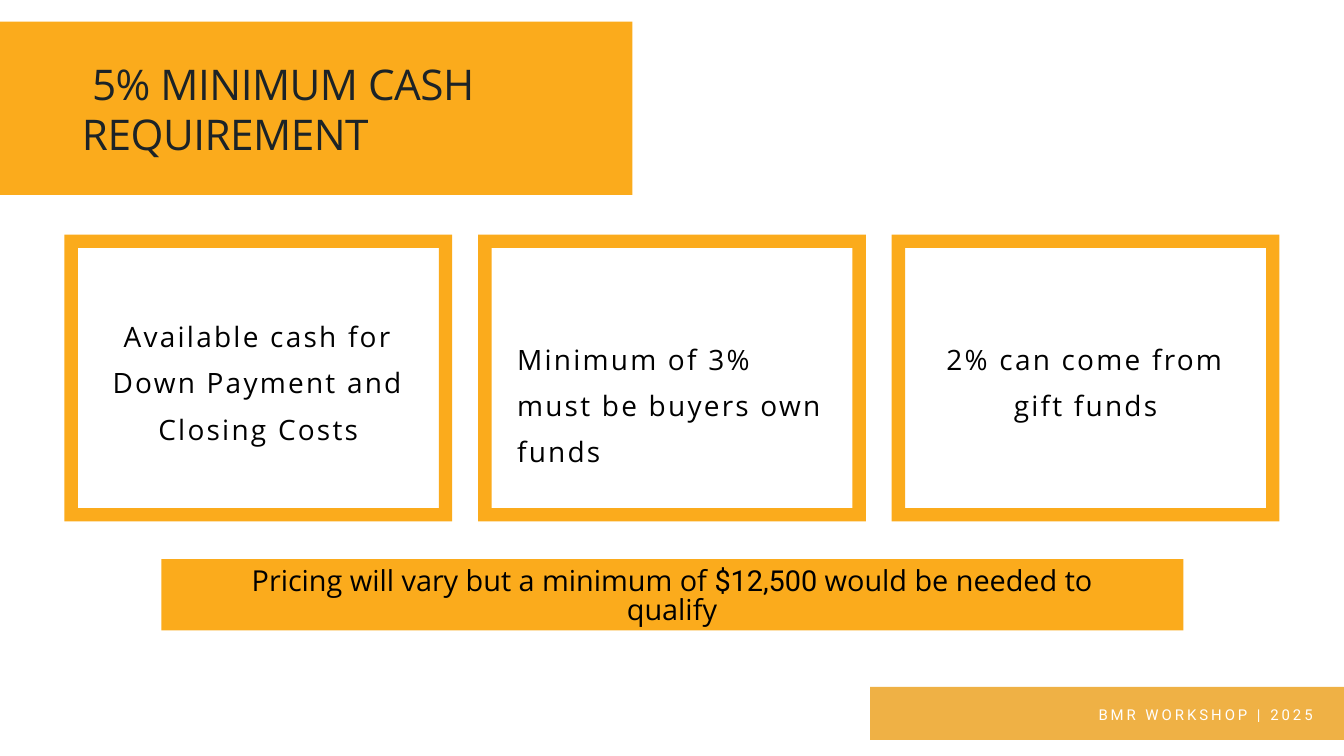
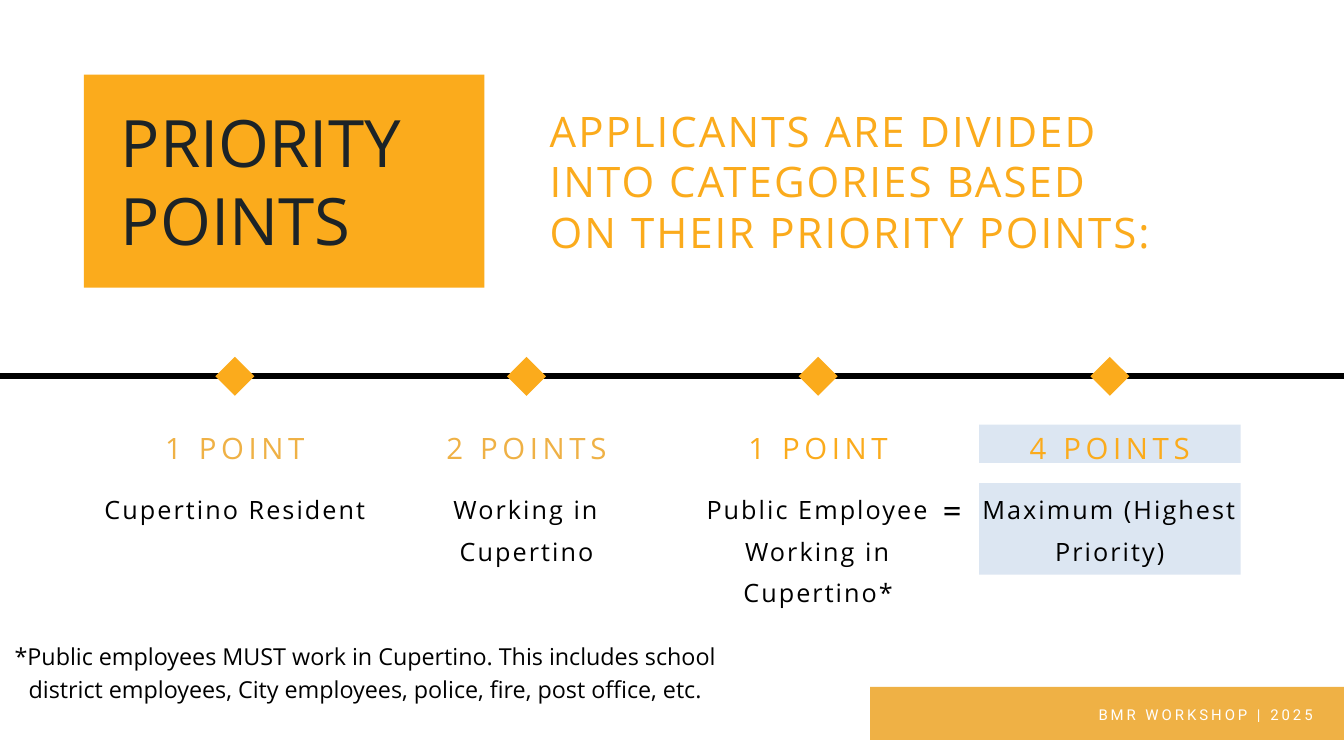
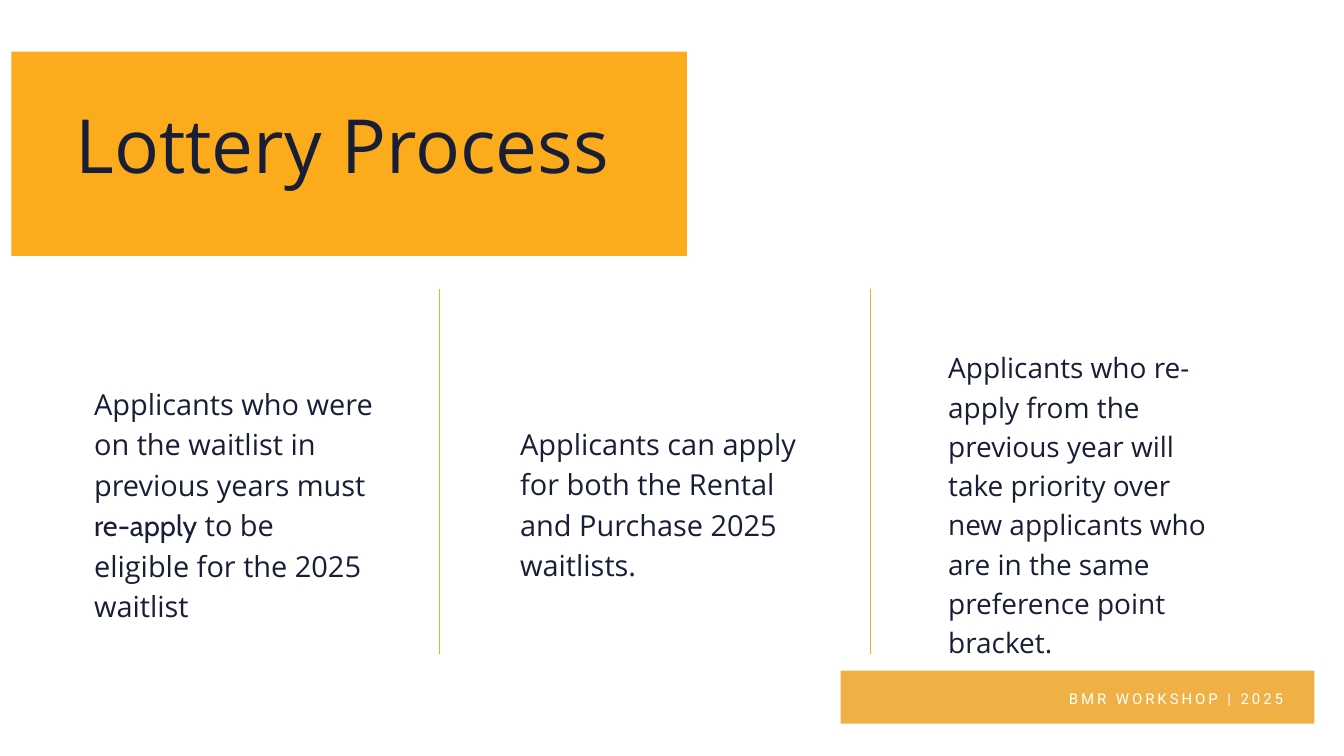
from dataclasses import dataclass, replace
from typing import NamedTuple

from lxml import etree
from pptx import Presentation
from pptx.dml.color import RGBColor
from pptx.enum.shapes import MSO_CONNECTOR, MSO_SHAPE
from pptx.enum.text import MSO_ANCHOR, MSO_AUTO_SIZE, PP_ALIGN
from pptx.oxml.ns import qn
from pptx.util import Inches, Pt

LEFT, CENTER, RIGHT = PP_ALIGN.LEFT, PP_ALIGN.CENTER, PP_ALIGN.RIGHT
TOP, NO_FIT = MSO_ANCHOR.TOP, MSO_AUTO_SIZE.NONE
RECTANGLE, FRAME, DIAMOND = MSO_SHAPE.RECTANGLE, MSO_SHAPE.FRAME, MSO_SHAPE.DIAMOND
STRAIGHT = MSO_CONNECTOR.STRAIGHT

COLUMNS, ROWS = 20, 11.25
SLIDE_WIDTH, SLIDE_HEIGHT = Inches(20), Inches(11.25)
TITLE_ONLY = 5


def col(count: float) -> int:
    return round(SLIDE_WIDTH * count / COLUMNS)


def row(count: float) -> int:
    return round(SLIDE_HEIGHT * count / ROWS)


class Box(NamedTuple):
    left: float
    top: float
    width: float
    height: float

    def emu(self) -> tuple:
        return col(self.left), row(self.top), col(self.width), row(self.height)


class Span(NamedTuple):
    text: str
    font: str = ""


@dataclass(frozen=True)
class Style:
    size: float
    leading: float | None
    color: str = "000000"
    font: str = "Open Sans"
    align: PP_ALIGN = LEFT
    tracking: float = 0
    indent: float = 0


@dataclass(frozen=True)
class Theme:
    amber: str = "FBAB1C"
    sand: str = "EFB145"
    pale_blue: str = "DCE6F2"
    black: str = "000000"
    cash_title: Style = Style(45.3, 53.5, "1C2327", tracking=-0.5, indent=0.15)
    points_title: Style = Style(70, 84, "1C2327")
    lottery_title: Style = Style(80, 80, "191E37")
    card: Style = Style(30, 49.5, align=CENTER, tracking=2.4)
    pricing: Style = Style(30.9, 30.9, align=CENTER)
    lead: Style = Style(45, 54, "FBAB1C", tracking=2.2)
    score: Style = Style(31.5, 44.1, "FBAB1C", align=CENTER, tracking=5)
    category: Style = Style(27, 44.5, align=CENTER, tracking=2.2)
    equals: Style = Style(40, None, font="Calibri", align=CENTER)
    footnote: Style = Style(25, 35, align=CENTER)
    step: Style = Style(31, 43.4, "191E37")
    small_step: Style = Style(30, 42, "191E37")
    footer: Style = Style(16, 22.4, "FFFFFF", "Roboto", RIGHT, 3.2)


THEME = Theme()


class Card(NamedTuple):
    text: str
    top: float
    height: float
    align: PP_ALIGN = CENTER


class Category(NamedTuple):
    score: str
    text: str
    height: float
    score_color: str
    highlighted: bool = False


class Step(NamedTuple):
    box: Box
    spans: tuple
    style: Style


CARDS = (
    Card("Available cash for Down Payment and Closing Costs", 4.57, 1.98),
    Card("Minimum of 3% must be buyers own funds", 4.91, 1.98, LEFT),
    Card("2% can come from gift funds", 4.91, 1.3),
)
CATEGORIES = (
    Category("1 POINT", "Cupertino Resident", 0.55, THEME.sand),
    Category("2 POINTS", "Working in Cupertino", 1.16, THEME.sand),
    Category("1 POINT", "Public Employee Working in Cupertino*", 1.78, THEME.amber),
    Category("4 POINTS", "Maximum (Highest Priority)", 1.36, THEME.amber, True),
)
STEPS = (
    Step(
        Box(1.4, 5.66, 4.15, 3.58),
        (
            Span("Applicants who were on the waitlist in previous years must "),
            Span("re-apply", "Cabin"),
            Span(" to be eligible for the 2025 waitlist"),
        ),
        THEME.step,
    ),
    Step(
        Box(7.74, 6.26, 4.15, 2.35),
        (Span("Applicants can apply for both the Rental and Purchase 2025 waitlists."),),
        THEME.step,
    ),
    Step(
        Box(14.11, 5.14, 4.15, 4.06),
        (
            Span(
                "Applicants who re-apply from the previous year will take priority "
                "over new applicants who are in the same preference point bracket."
            ),
        ),
        THEME.small_step,
    ),
)


def write(shape, spans: tuple, style: Style) -> None:
    frame = shape.text_frame
    frame_format = {
        "word_wrap": True,
        "auto_size": NO_FIT,
        "vertical_anchor": TOP,
        "margin_left": 0,
        "margin_top": 0,
        "margin_right": 0,
        "margin_bottom": 0,
    }
    for name, value in frame_format.items():
        setattr(frame, name, value)
    paragraph = frame.paragraphs[0]
    paragraph.alignment = style.align
    if style.leading:
        paragraph.line_spacing = Pt(style.leading)
    if style.indent:
        paragraph._p.get_or_add_pPr().set("indent", str(col(style.indent)))
    for span in spans:
        run = paragraph.add_run()
        run.text = span.text
        font_format = {"name": span.font or style.font, "size": Pt(style.size), "bold": False}
        for name, value in font_format.items():
            setattr(run.font, name, value)
        run.font.color.rgb = RGBColor.from_string(style.color)
        if style.tracking:
            run._r.get_or_add_rPr().set("spc", str(round(style.tracking * 100)))


def add_panel(slide, box: Box, color: str, kind: MSO_SHAPE = RECTANGLE):
    panel = slide.shapes.add_shape(kind, *box.emu())
    panel.shadow.inherit = False
    panel.fill.solid()
    panel.fill.fore_color.rgb = RGBColor.from_string(color)
    panel.line.fill.background()
    return panel


def add_text(slide, box: Box, style: Style, *spans: Span) -> None:
    write(slide.shapes.add_textbox(*box.emu()), spans, style)


def add_rule(slide, start: tuple, end: tuple, color: str, weight: float) -> None:
    rule = slide.shapes.add_connector(
        STRAIGHT, col(start[0]), row(start[1]), col(end[0]), row(end[1])
    )
    rule.line.color.rgb = RGBColor.from_string(color)
    rule.line.width = Pt(weight)
    etree.SubElement(rule.element.spPr, qn("a:effectLst"))


def add_title(slide, band: Box, box: Box, text: str, style: Style) -> None:
    add_panel(slide, band, THEME.amber)
    title = slide.shapes.title
    for name, value in zip(("left", "top", "width", "height"), box.emu()):
        setattr(title, name, value)
    write(title, (Span(text),), style)
    slide.shapes.element.append(title.element)


def add_footer(slide, left: float = 12.95, top: float = 10.22) -> None:
    add_panel(slide, Box(left, top, 7.05, 0.79), THEME.sand)
    add_text(slide, Box(left + 0.64, top + 0.24, 5.95, 0.29), THEME.footer,
             Span("BMR WORKSHOP | 2025"))


def build_cash(slide) -> None:
    margin, width, height, border, padding = 0.96, 5.77, 4.27, 0.2, 0.58
    pitch = (COLUMNS - 2 * margin - width) / (len(CARDS) - 1)
    for index, card in enumerate(CARDS):
        left = margin + index * pitch
        outline = add_panel(slide, Box(left, 3.49, width, height), THEME.amber, FRAME)
        outline.adjustments[0] = border / height
        add_text(slide, Box(left + padding, card.top, width - 2 * padding, card.height),
                 replace(THEME.card, align=card.align), Span(card.text))
    add_title(slide, Box(0, 0.32, 9.41, 2.58), Box(1.22, 0.88, 7.5, 1.48),
              "5% MINIMUM CASH REQUIREMENT", THEME.cash_title)
    add_panel(slide, Box(2.4, 8.32, 15.21, 1.06), THEME.amber)
    add_text(slide, Box(3.27, 8.46, 13.46, 0.87), THEME.pricing,
             Span("Pricing will vary but a minimum of "),
             Span("$12,500", "Roboto"),
             Span(" would be needed to qualify"))
    add_footer(slide)


def build_points(slide) -> None:
    add_title(slide, Box(1.25, 1.11, 5.96, 3.17), Box(1.8, 1.52, 4.86, 2.34),
              "PRIORITY POINTS", THEME.points_title)
    add_text(slide, Box(8.18, 1.57, 9.03, 2.25), THEME.lead,
             Span("APPLICANTS ARE DIVIDED INTO CATEGORIES BASED ON THEIR PRIORITY POINTS:"))
    first, pitch, width, axis, marker = 1.55, 4.34, 3.89, 5.6, 0.58
    add_rule(slide, (0, axis), (COLUMNS, axis), THEME.black, 6.5)
    for index, category in enumerate(CATEGORIES):
        left = first + index * pitch
        add_panel(slide, Box(left + (width - marker) / 2, axis - marker / 2, marker, marker),
                  THEME.amber, DIAMOND)
        lines = (
            (Box(left, 6.32, width, 0.57), category.score,
             replace(THEME.score, color=category.score_color)),
            (Box(left, 7.19, width, category.height), category.text, THEME.category),
        )
        for box, text, style in lines:
            if category.highlighted:
                write(add_panel(slide, box, THEME.pale_blue), (Span(text),), style)
            else:
                add_text(slide, box, style, Span(text))
    add_footer(slide)
    add_text(slide, Box(0.07, 9.49, 10.73, 0.94), THEME.footnote,
             Span("*Public employees MUST work in Cupertino. This includes school district "
                  "employees, City employees, police, fire, post office, etc."))
    add_text(slide, Box(13.92, 7.24, 0.5, 0.77), THEME.equals, Span("="))


def build_lottery(slide) -> None:
    for divider in (6.54, 12.95):
        add_rule(slide, (divider, 4.3), (divider, 9.73), THEME.amber, 0.75)
    add_title(slide, Box(0.17, 0.77, 10.05, 3.04), Box(1.12, 1.7, 10.47, 1.16),
              "Lottery Process", THEME.lottery_title)
    for step in STEPS:
        add_text(slide, step.box, step.style, *step.spans)
    add_footer(slide, 12.51, 9.98)


def main() -> None:
    deck = Presentation()
    deck.slide_width, deck.slide_height = SLIDE_WIDTH, SLIDE_HEIGHT
    for build in (build_cash, build_points, build_lottery):
        build(deck.slides.add_slide(deck.slide_layouts[TITLE_ONLY]))
    deck.save("out.pptx")


if __name__ == "__main__":
    main()
